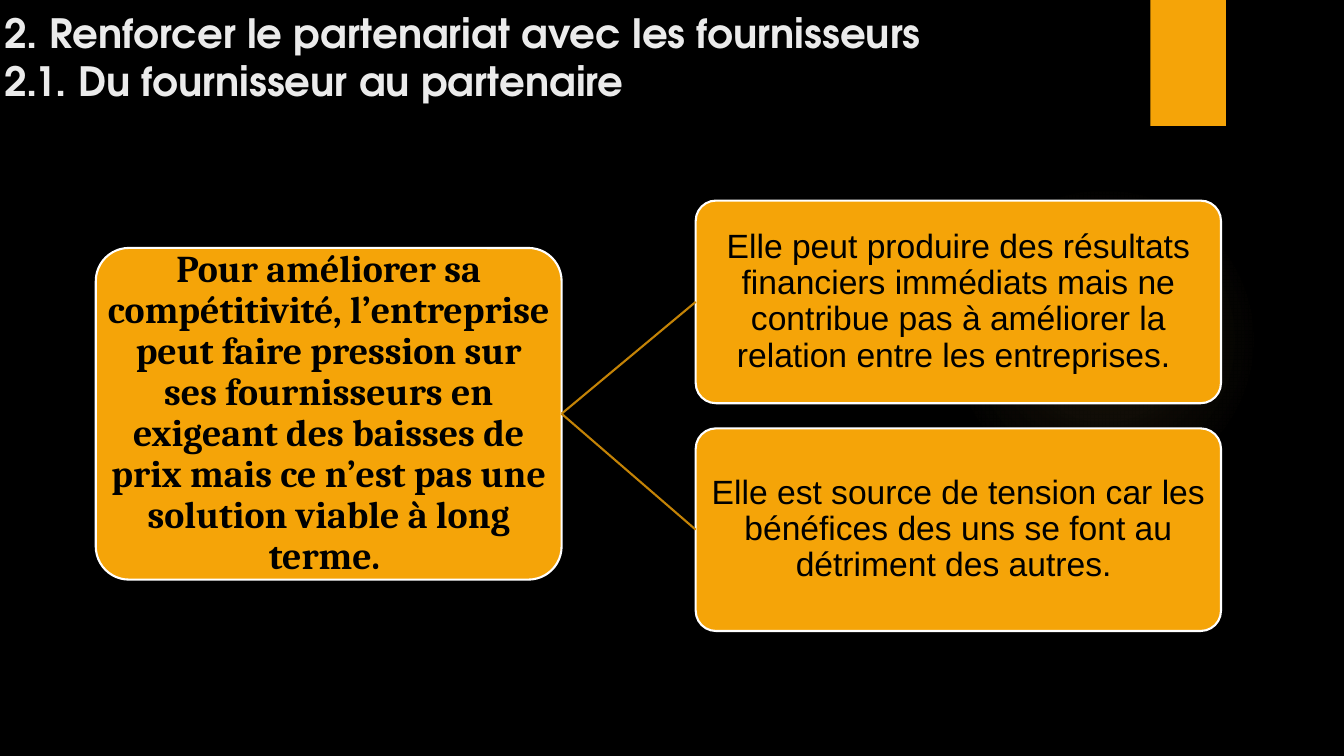
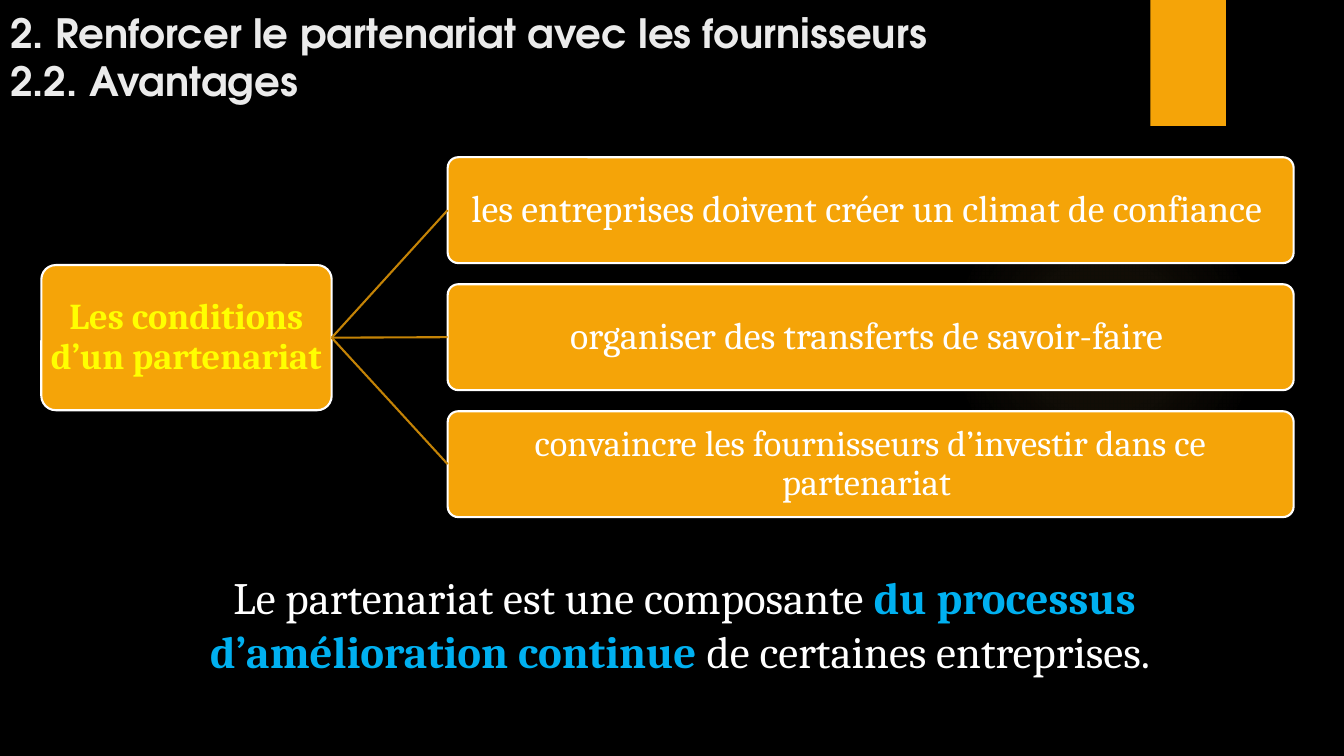
from pptx import Presentation
from pptx.dml.color import RGBColor
from pptx.enum.shapes import MSO_CONNECTOR, MSO_SHAPE
from pptx.enum.text import MSO_ANCHOR, MSO_AUTO_SIZE, PP_ALIGN
from pptx.oxml import parse_xml
from pptx.oxml.ns import nsdecls
from pptx.util import Emu, Pt

PX = 9144  # 100 px to the inch
BLACK, WHITE, PALE = "000000", "FFFFFF", "EBEBEB"
AMBER, BROWN, GLOW = "F5A408", "C48306", "FAC96A"
YELLOW, BLUE = "FFFF00", "00B0F0"
SERIF, SANS, HEAD = "Cambria", "Arial", "TeX Gyre Adventor"
CHAPTER = "2. Renforcer le partenariat avec les fournisseurs"


def px(*sizes):
    return [Emu(size * PX) for size in sizes]


def rgb(code):
    return RGBColor.from_string(code)


def style(run, face, size, color, bold=False):
    font = run.font
    font.name, font.size, font.bold = face, Pt(size), bold
    font.color.rgb = rgb(color)


def shape(slide, kind, box, color):
    item = slide.shapes.add_shape(kind, *px(*box))
    item.shadow.inherit = False
    item.fill.solid()
    item.fill.fore_color.rgb = rgb(color)
    item.line.fill.background()
    return item


def halo(slide, box):
    """Draw a faint round glow that fades to nothing."""
    item = shape(slide, MSO_SHAPE.OVAL, box, GLOW)
    stops = "".join(
        f'<a:gs pos="{pos}000"><a:srgbClr val="{GLOW}">'
        f'<a:alpha val="{alpha}000"/></a:srgbClr></a:gs>'
        for pos, alpha in ((0, 7), (36, 6), (69, 0)))
    grad = parse_xml(
        f'<a:gradFill {nsdecls("a")}><a:gsLst>{stops}</a:gsLst>'
        '<a:path path="circle"><a:fillToRect l="50000" t="50000" '
        'r="50000" b="50000"/></a:path></a:gradFill>')
    props = item.element.spPr
    props.replace(props.find("{*}solidFill"), grad)


def frame(deck, topic, left):
    """Add a slide with the shared decor and a two-line title."""
    slide = deck.slides.add_slide(deck.slide_layouts[5])
    halo(slide, (941, 183, 308, 308))
    shape(slide, MSO_SHAPE.RECTANGLE, (1141, 0, 75, 125), AMBER)
    title = slide.shapes.title
    title.left, title.top, title.width, title.height = px(left, 0, 1082, 109)
    text = title.text_frame
    text.text = f"{CHAPTER}\n{topic}"
    text.auto_size = MSO_AUTO_SIZE.NONE
    text.vertical_anchor = MSO_ANCHOR.BOTTOM
    for para in text.paragraphs:
        para.alignment = PP_ALIGN.LEFT
        style(para.runs[0], HEAD, 28.8, PALE, True)
    return slide


def node(slide, box, words, look):
    item = shape(slide, MSO_SHAPE.ROUNDED_RECTANGLE, box, AMBER)
    item.adjustments[0] = 0.1
    item.line.color.rgb = rgb(WHITE)
    item.line.width = Pt(1.5)
    text = item.text_frame
    text.text = words
    text.word_wrap = True
    text.vertical_anchor = MSO_ANCHOR.MIDDLE
    text.margin_left = text.margin_right = Emu(2 * PX)
    text.margin_top = text.margin_bottom = Emu(2 * PX)
    para = text.paragraphs[0]
    para.alignment = PP_ALIGN.CENTER
    para.line_spacing = 0.9
    style(para.runs[0], *look)
    return item


def link(slide, start, end):
    line = slide.shapes.add_connector(MSO_CONNECTOR.STRAIGHT, 0, 0, 0, 0)
    line.begin_connect(start, 3)
    line.end_connect(end, 1)
    line.line.color.rgb = rgb(BROWN)
    line.line.width = Pt(1.5)
    line.element.spPr.append(parse_xml(f'<a:effectLst {nsdecls("a")}/>'))


def tree(slide, root, first, gap, leaves):
    """Link a root (box, words, look) to a column of leaves (words, look)."""
    trunk = node(slide, *root)
    left, top, width, height = first
    for row, (words, look) in enumerate(leaves):
        box = left, top + row * (height + gap), width, height
        link(slide, trunk, node(slide, box, words, look))


def closing(slide, box, parts):
    text = slide.shapes.add_textbox(*px(*box)).text_frame
    text.word_wrap = True
    para = text.paragraphs[0]
    para.alignment = PP_ALIGN.CENTER
    for words, color, bold in parts:
        run = para.add_run()
        run.text = words
        style(run, SERIF, 32, color, bold)


def partner(deck):
    slide = frame(deck, "2.1. Du fournisseur au partenaire", -6)
    look = SANS, 24, BLACK
    root = ((95, 246, 462, 329),
            "Pour améliorer sa compétitivité, l’entreprise peut faire pression "
            "sur ses fournisseurs en exigeant des baisses de prix mais ce n’est "
            "pas une solution viable à long terme. ",
            (SERIF, 27, BLACK, True))
    tree(slide, root, (690, 199, 521, 201), 25, (
        ("Elle peut produire des résultats financiers immédiats mais ne "
         "contribue pas à améliorer la relation entre les entreprises. ", look),
        ("Elle est source de tension car les bénéfices des uns se font au "
         "détriment des autres. ", look)))


def gains(deck):
    slide = frame(deck, "2.2. Avantages", 0)
    look = SERIF, 27, WHITE
    root = ((41, 263, 288, 144), "Les conditions d’un partenariat",
            (SERIF, 26, YELLOW, True))
    tree(slide, root, (444, 156, 839, 105), 21, (
        ("les entreprises doivent créer un climat de confiance ", look),
        ("organiser des transferts de savoir-faire ", look),
        ("convaincre les fournisseurs d’investir dans ce partenariat ",
         (SERIF, 26, WHITE))))
    closing(slide, (88, 560, 1182, 118), (
        ("Le partenariat est une composante ", WHITE, False),
        ("du processus d’amélioration continue ", BLUE, True),
        ("de certaines entreprises. ", WHITE, False)))


def main():
    deck = Presentation()
    deck.slide_width, deck.slide_height = px(1333, 750)
    back = deck.slide_master.background.fill
    back.solid()
    back.fore_color.rgb = rgb(BLACK)
    partner(deck)
    gains(deck)
    deck.save("out.pptx")


if __name__ == "__main__":
    main()
